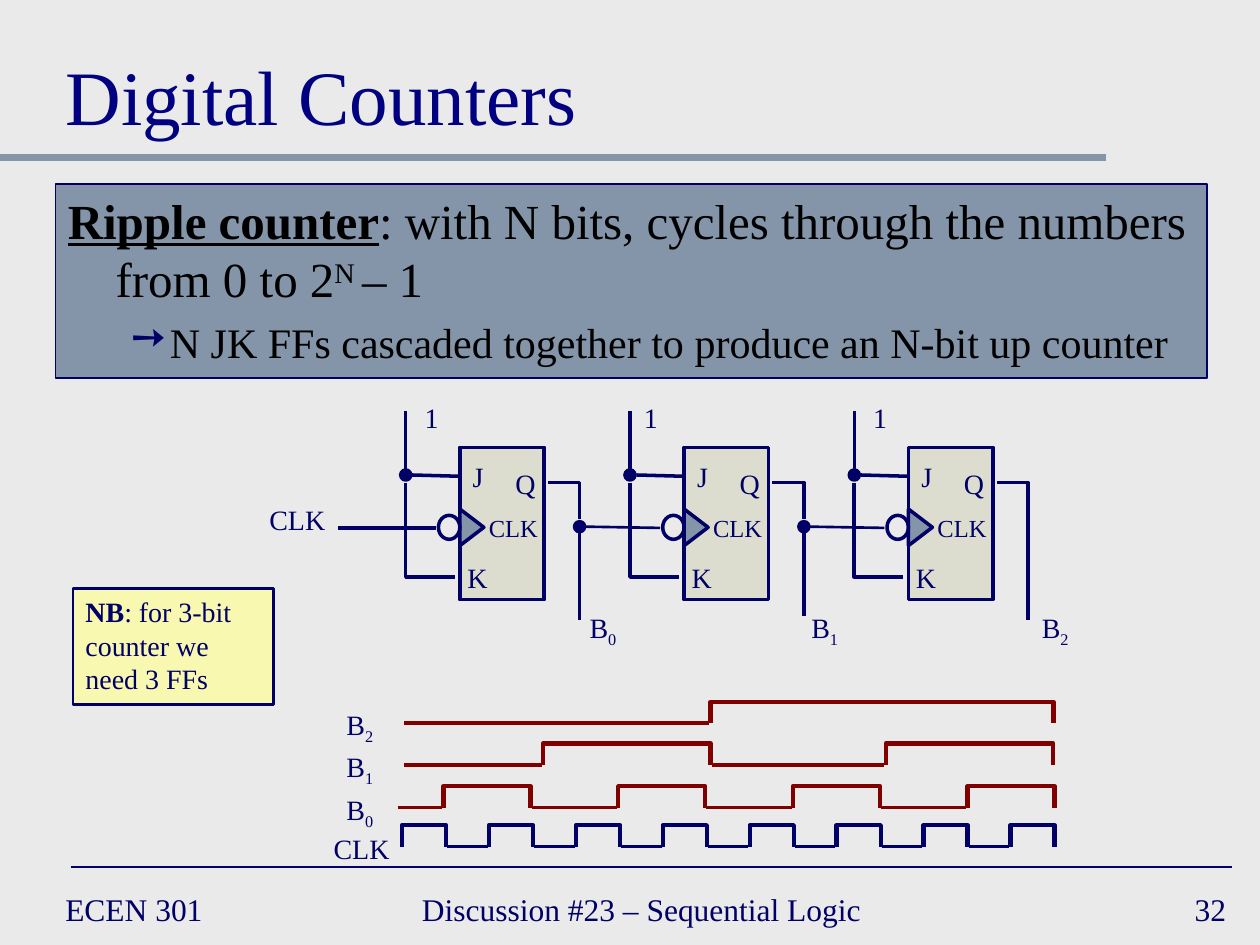
from lxml.etree import SubElement
from pptx import Presentation
from pptx.dml.color import RGBColor
from pptx.enum.shapes import MSO_CONNECTOR as Connector, MSO_SHAPE as Preset
from pptx.enum.text import MSO_ANCHOR as Anchor, MSO_AUTO_SIZE as AutoSize, PP_ALIGN as Align
from pptx.oxml.ns import qn
from pptx.util import Inches, Pt

FONT = "Times New Roman"
COLORS = {"background": "EAEAEA", "navy": "000066", "title": "000080", "slate": "8495A9",
          "black": "000000", "olive": "ABA964", "yellow": "FFFF99", "maroon": "800000"}

TITLE = "Digital Counters"
DEFINITION = [("Ripple counter", {"bold": True, "underline": True}),
              (": with N bits, cycles through the numbers from 0 to 2", {}),
              ("N ", {"baseline": 30}), ("– 1", {})]
DETAIL = "N JK FFs cascaded together to produce an N-bit up counter"
NOTE = [("NB", {"bold": True}), (": for 3-bit counter we need 3 FFs", {})]
# text, left, width, alignment
FOOTERS = [("ECEN 301", 0.42, 2.17, Align.LEFT),
           ("Discussion #23 – Sequential Logic", 3.25, 3.83, Align.LEFT),
           ("32", 7.75, 2.08, Align.RIGHT)]

FIRST_STAGE, STAGE_PITCH = 3.65, 1.78
STAGE_TOP, CLOCK_Y = 3.55, 4.19
# offsets from the flip-flop's left edge: label "1", output label; then the output's lower end
STAGES = [(-0.38, 0.92, 4.92), (-0.42, 0.90, 4.89), (-0.38, 0.95, 4.92)]
# text, offset from the flip-flop's left edge, top, width, height, size
PINS = [("J", 0, 3.6, 0.29, 0.37, 16), ("Q", 0.34, 3.65, 0.36, 0.37, 16),
        ("CLK", 0.13, 4.02, 0.59, 0.33, 14), ("K", -0.04, 4.4, 0.36, 0.37, 16)]

PULSE_HEIGHT, PULSE_GAP = 0.17, 0.01
# bit (None is the clock), colour, baseline, lead-in start, first pulse, last pulse, count, width
WAVES = [(2, "maroon", 5.74, 3.21, 5.64, 5.64, 1, 2.72),
         (1, "maroon", 6.07, 3.21, 4.31, 7.03, 2, 1.33),
         (0, "maroon", 6.41, 3.16, 3.52, 7.68, 4, 0.69),
         (None, "navy", 6.72, None, 3.19, 8.02, 8, 0.35)]


def rgb(name):
    return RGBColor.from_string(COLORS[name])


def write(paragraph, text, size=16, color="navy", align=Align.LEFT):
    """Fill a paragraph from a string or from (text, run format) pairs."""
    paragraph.alignment = align
    for content, style in [(text, {})] if isinstance(text, str) else text:
        run = paragraph.add_run()
        run.text = content
        font = run.font
        font.name, font.size, font.color.rgb = FONT, Pt(size), rgb(color)
        font.bold = style.get("bold", False)
        font.underline = style.get("underline", False)
        if "baseline" in style:
            run._r.get_or_add_rPr().set("baseline", str(style["baseline"] * 1000))


def add_label(shapes, text, left, top, width, height=0.37, wrap=False, align=Align.CENTER,
              anchor=Anchor.TOP, size=16):
    frame = shapes.add_textbox(*map(Inches, (left, top, width, height))).text_frame
    frame.word_wrap, frame.vertical_anchor = wrap, anchor
    write(frame.paragraphs[0], text, size=size, align=align)


def bit_name(bit):
    return [("B", {}), (str(bit), {"baseline": -25})]


def add_line(shapes, start, end, color="navy", width=2, elbow=False):
    """Draw a straight line, or an elbow that leaves its start horizontally."""
    kind = Connector.ELBOW if elbow else Connector.STRAIGHT
    line = shapes.add_connector(kind, *map(Inches, (*start, *end)))
    line.line.color.rgb, line.line.width = rgb(color), Pt(width)
    properties = line._element.spPr
    if elbow:
        properties.find(qn("a:prstGeom")).set("prst", "bentConnector2")
    SubElement(properties, qn("a:effectLst"))


def add_shape(shapes, preset, left, top, width, height, fill=None, alpha=None, weight=2):
    shape = shapes.add_shape(preset, *map(Inches, (left, top, width, height)))
    shape.shadow.inherit = False
    shape.line.color.rgb, shape.line.width = rgb("navy"), Pt(weight)
    if fill is None:
        shape.fill.background()
        return shape
    shape.fill.solid()
    shape.fill.fore_color.rgb = rgb(fill)
    if alpha:
        color = shape._element.spPr.find(qn("a:solidFill"))[0]
        SubElement(color, qn("a:alpha")).set("val", str(alpha * 1000))
    return shape


def add_dot(shapes, x, y):
    add_shape(shapes, Preset.OVAL, x - 0.04, y - 0.04, 0.08, 0.08, fill="navy")


def indent(paragraph, margin, hanging):
    properties = paragraph._p.get_or_add_pPr()
    properties.set("marL", str(Inches(margin)))
    properties.set("indent", str(-Inches(hanging)))
    return properties


def add_stage(shapes, bit, one_offset, name_offset, output_end):
    left = FIRST_STAGE + bit * STAGE_PITCH
    input_x, output_x = left - 0.43, left + 0.95
    add_shape(shapes, Preset.RECTANGLE, left, STAGE_TOP, 0.67, 1.21, fill="olive", alpha=20)
    clock = add_shape(shapes, Preset.ISOSCELES_TRIANGLE, left - 0.05, 4.09, 0.29, 0.19, fill="slate")
    clock.rotation = 90
    add_shape(shapes, Preset.OVAL, left - 0.17, 4.09, 0.17, 0.19)
    for text, offset, top, width, height, size in PINS:
        add_label(shapes, text, left + offset, top, width, height, size=size)

    add_label(shapes, "1", left + one_offset, 3.13, 0.31)
    add_line(shapes, (input_x, 3.72), (input_x, 3.26))
    add_dot(shapes, input_x, 3.77)
    add_line(shapes, (left, 3.78), (input_x + 0.05, 3.77))
    add_line(shapes, (left - 0.04, 4.58), (input_x, 3.83), elbow=True)

    add_label(shapes, bit_name(bit), left + name_offset, 4.8, 0.43)
    last = bit == len(STAGES) - 1
    add_line(shapes, (left + 0.7, 3.83), (output_x, output_end if last else 4.12), elbow=True)
    if not last:
        add_dot(shapes, output_x, 4.18)
        add_line(shapes, (output_x, 4.23), (output_x, output_end))
        add_line(shapes, (output_x + 0.05, 4.18), (left + STAGE_PITCH - 0.19, CLOCK_Y), width=1.5)


def add_wave(shapes, bit, color, base, lead, first, last, count, width):
    step = (last - first) / max(count - 1, 1)
    low_start = lead
    for index in range(count):
        rise = first + index * step
        fall, top = rise + width, base - PULSE_HEIGHT
        builder = shapes.build_freeform(Inches(rise), Inches(base))
        corners = [(rise, top), (fall, top), (fall, base)]
        builder.add_line_segments([tuple(map(Inches, corner)) for corner in corners], close=False)
        pulse = builder.convert_to_shape()
        pulse.shadow.inherit = False
        pulse.fill.background()
        pulse.line.color.rgb, pulse.line.width = rgb(color), Pt(2.5)
        if low_start is not None:
            add_line(shapes, (low_start, base), (rise - PULSE_GAP, base), color=color)
        low_start = fall + PULSE_GAP
    if bit is None:
        add_label(shapes, "CLK", 2.55, base - PULSE_HEIGHT, 0.64)
    else:
        add_label(shapes, bit_name(bit), 2.64, base - PULSE_HEIGHT, 0.43)


def add_frame(slide):
    """Add the title, rules and footers."""
    add_line(slide.shapes, (0, 1.25), (8.78, 1.25), color="slate", width=4)
    add_line(slide.shapes, (0.56, 6.88), (9.78, 6.88), width=1)
    for text, left, width, align in FOOTERS:
        add_label(slide.shapes, text, left, 7, width, 0.42, wrap=True, align=align,
                  anchor=Anchor.MIDDLE, size=18)
    title = slide.shapes.title
    title.left, title.top, title.width, title.height = map(Inches, (0.42, 0.17, 9.17, 1))
    title.text_frame.vertical_anchor = Anchor.BOTTOM
    title.text_frame.auto_size = AutoSize.NONE
    write(title.text_frame.paragraphs[0], TITLE, size=44, color="title")


def add_panels(shapes):
    """Add the definition panel and the note."""
    panel = add_shape(shapes, Preset.RECTANGLE, 0.44, 1.46, 9.14, 1.54, fill="slate", weight=0.75)
    note = add_shape(shapes, Preset.RECTANGLE, 0.58, 4.67, 1.59, 0.92, fill="yellow", alpha=70,
                     weight=1.5)
    for shape in (panel, note):
        shape.text_frame.word_wrap, shape.text_frame.vertical_anchor = True, Anchor.TOP
    write(note.text_frame.paragraphs[0], NOTE)

    definition, detail = panel.text_frame.paragraphs[0], panel.text_frame.add_paragraph()
    indent(definition, 0.38, 0.38)
    write(definition, DEFINITION, size=28, color="black")
    properties = indent(detail, 0.81, 0.31)
    bullet_color = SubElement(properties, qn("a:buClr"))
    SubElement(bullet_color, qn("a:srgbClr")).set("val", COLORS["navy"])
    SubElement(properties, qn("a:buChar")).set("char", "➙")
    detail.space_before = Pt(5)
    write(detail, DETAIL, size=24, color="black")


def main():
    presentation = Presentation()
    presentation.slide_width, presentation.slide_height = Inches(10), Inches(7.5)
    slide = presentation.slides.add_slide(presentation.slide_layouts[5])
    slide.background.fill.solid()
    slide.background.fill.fore_color.rgb = rgb("background")
    add_frame(slide)
    add_panels(slide.shapes)

    circuit = slide.shapes.add_group_shape().shapes
    add_label(circuit, "CLK", 2.04, 3.94, 0.64)
    add_line(circuit, (3.46, CLOCK_Y), (2.68, CLOCK_Y))
    for bit, stage in enumerate(STAGES):
        add_stage(circuit, bit, *stage)

    timing = slide.shapes.add_group_shape().shapes
    for wave in WAVES:
        add_wave(timing, *wave)
    presentation.save("out.pptx")


if __name__ == "__main__":
    main()
